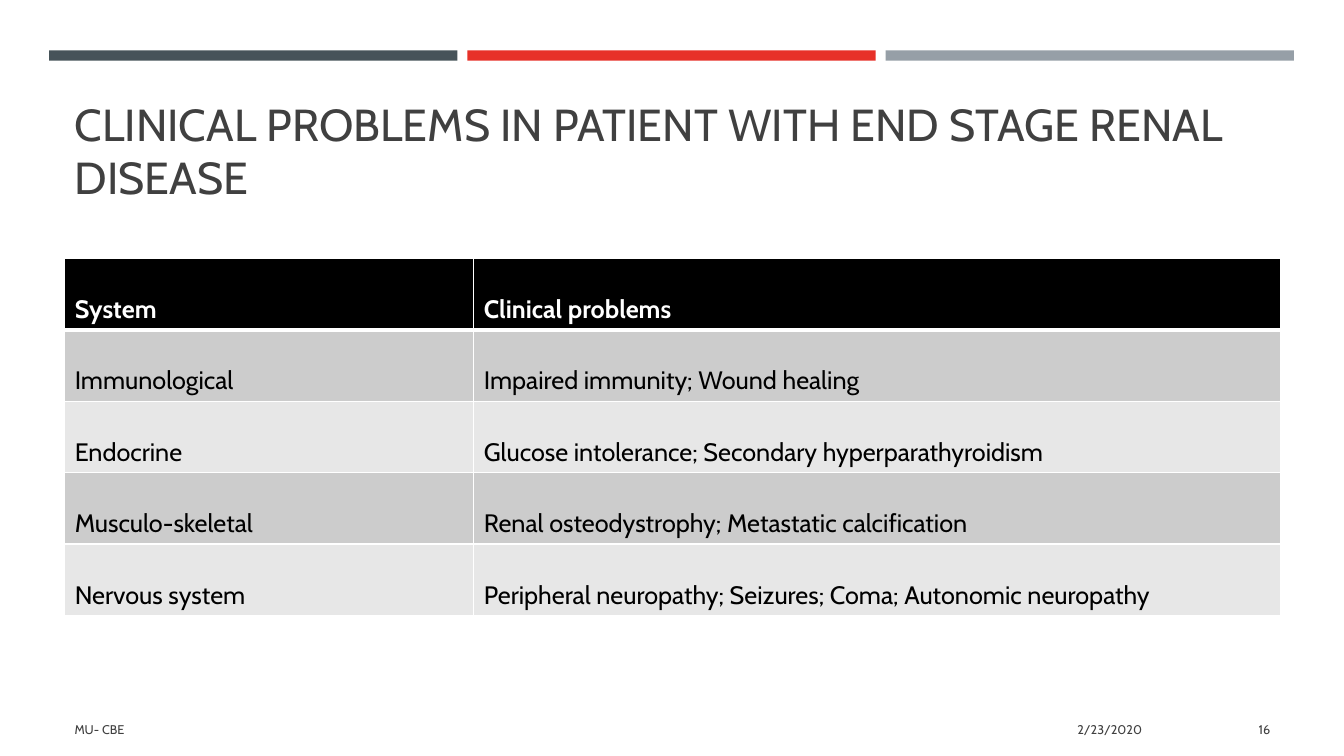
from pptx import Presentation
from pptx.dml.color import RGBColor
from pptx.enum.shapes import MSO_SHAPE
from pptx.enum.text import MSO_ANCHOR as ANCHOR, PP_ALIGN as ALIGN
from pptx.oxml import parse_xml
from pptx.oxml.ns import nsdecls
from pptx.util import Cm, Pt

SLATE = RGBColor(0x46, 0x53, 0x59)
RED = RGBColor(0xE7, 0x31, 0x29)
GREY = RGBColor(0x96, 0x9F, 0xA7)
TEXT = RGBColor(0x40, 0x40, 0x40)
BLACK = RGBColor(0, 0, 0)
WHITE = RGBColor(0xFF, 0xFF, 0xFF)
BANDS = [RGBColor(0xE7, 0xE7, 0xE7), RGBColor(0xCC, 0xCC, 0xCC)]
FONT = "Cabin"


def style(p, size, color, bold=False):
    for r in p.runs:
        r.font.name = FONT
        r.font.size = Pt(size)
        r.font.bold = bold
        r.font.color.rgb = color


def add_text(s, text, left, top, width, height, size, anchor, align):
    tf = s.shapes.add_textbox(Cm(left), Cm(top), Cm(width), Cm(height)).text_frame
    tf.word_wrap = True
    tf.vertical_anchor = anchor
    tf.text = text
    p = tf.paragraphs[0]
    p.alignment = align
    style(p, size, TEXT)


prs = Presentation()
prs.slide_width = Cm(33.87)
prs.slide_height = Cm(19.05)
s = prs.slides.add_slide(prs.slide_layouts[6])

for i, color in enumerate([SLATE, RED, GREY]):
    sp = s.shapes.add_shape(MSO_SHAPE.RECTANGLE, Cm(1.24 + i * 10.54), Cm(1.27), Cm(10.29), Cm(0.26))
    sp.shadow.inherit = False
    sp.fill.solid()
    sp.fill.fore_color.rgb = color
    sp.line.fill.background()

add_text(s, "CLINICAL PROBLEMS IN PATIENT WITH END STAGE RENAL DISEASE",
         1.63, 1.96, 30.63, 3.3, 32, ANCHOR.BOTTOM, ALIGN.LEFT)

rows = [
    ("System", "Clinical problems"),
    ("Immunological", "Impaired immunity; Wound healing"),
    ("Endocrine", "Glucose intolerance; Secondary hyperparathyroidism"),
    ("Musculo-skeletal", "Renal osteodystrophy; Metastatic calcification"),
    ("Nervous system", "Peripheral neuropathy; Seizures; Coma; Autonomic neuropathy"),
]
table = s.shapes.add_table(len(rows), 2, Cm(1.63), Cm(6.51), Cm(30.63), Cm(9)).table
table.columns[0].width = Cm(10.31)
table.columns[1].width = Cm(20.32)

for i, row in enumerate(rows):
    header = i == 0
    table.rows[i].height = Cm(1.8)
    for j, text in enumerate(row):
        cell = table.cell(i, j)
        widths = {"lnL": 1, "lnR": 1, "lnT": 3 if i == 1 else 1, "lnB": 3 if header else 1}
        for side, width in widths.items():
            cell._tc.get_or_add_tcPr().append(parse_xml(
                f'<a:{side} {nsdecls("a")} w="{Pt(width)}"><a:solidFill>'
                f'<a:srgbClr val="{WHITE}"/></a:solidFill></a:{side}>'))
        cell.fill.solid()
        cell.fill.fore_color.rgb = BLACK if header else BANDS[i % 2]
        cell.text = text
        p = cell.text_frame.paragraphs[0]
        p.line_spacing = 2.0
        style(p, 18, WHITE if header else BLACK, header)

for text, left, width, align in [
    ("MU- CBE", 1.63, 19.2, ALIGN.LEFT),
    ("2/23/2020", 21.13, 7.9, ALIGN.RIGHT),
    ("16", 29.34, 2.92, ALIGN.RIGHT),
]:
    add_text(s, text, left, 17.86, width, 1.02, 9, ANCHOR.MIDDLE, align)

prs.save("out.pptx")
